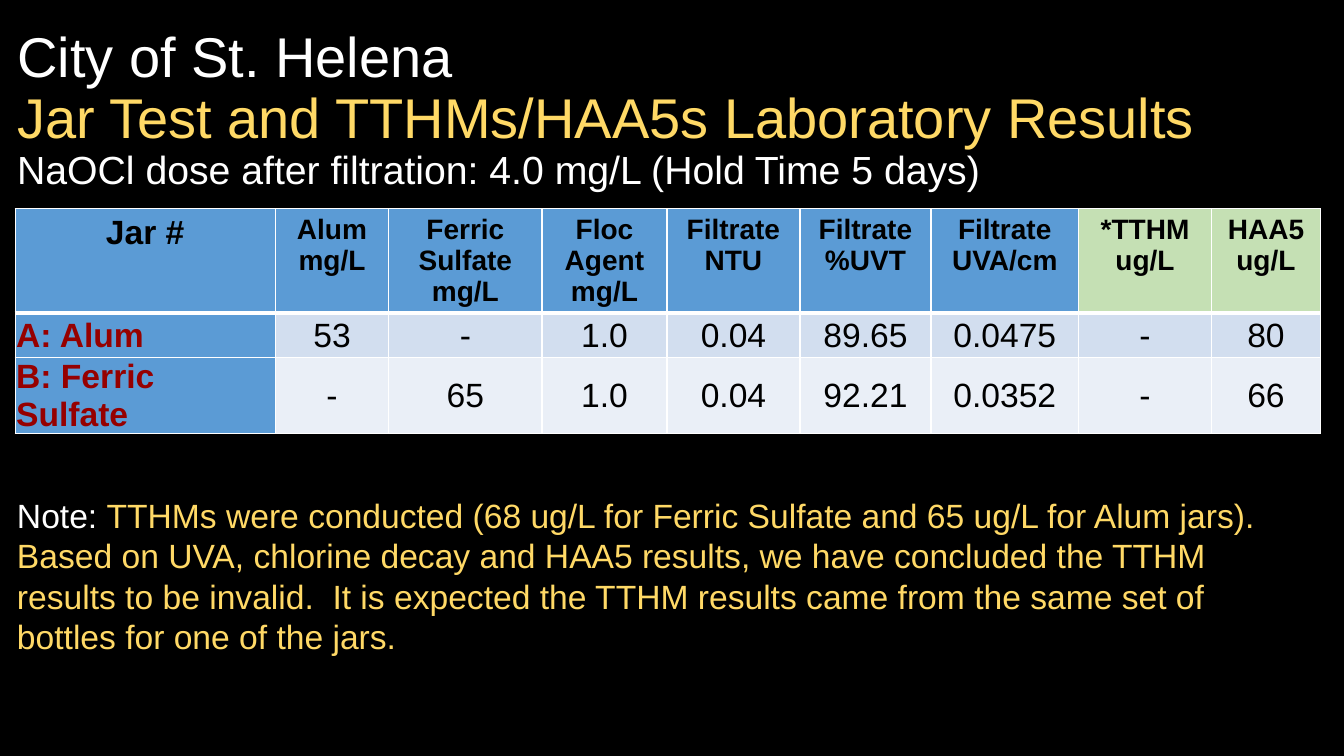
"""Build the jar test results slide."""
from copy import deepcopy
from dataclasses import dataclass

from lxml import etree
from pptx import Presentation
from pptx.dml.color import RGBColor
from pptx.enum.text import MSO_ANCHOR, MSO_AUTO_SIZE, PP_ALIGN
from pptx.oxml.ns import qn
from pptx.util import Emu, Inches, Pt

LEFT, CENTER = PP_ALIGN.LEFT, PP_ALIGN.CENTER
TOP, MIDDLE = MSO_ANCHOR.TOP, MSO_ANCHOR.MIDDLE
FIXED = MSO_AUTO_SIZE.NONE

BLACK = RGBColor(0x00, 0x00, 0x00)
WHITE = RGBColor(0xFF, 0xFF, 0xFF)
GOLD = RGBColor(0xFF, 0xD9, 0x66)
RED = RGBColor(0x96, 0x00, 0x00)
BLUE = RGBColor(0x5B, 0x9B, 0xD5)
GREEN = RGBColor(0xC5, 0xE0, 0xB4)
MIST = RGBColor(0xD2, 0xDE, 0xEF)
PALE = RGBColor(0xEA, 0xEF, 0xF7)

FONT = "Arial"
WIDTH, HEIGHT = Inches(13.33), Inches(7.5)


@dataclass(frozen=True)
class Piece:
    text: str
    size: int
    color: RGBColor
    bold: bool = False


@dataclass(frozen=True)
class Column:
    head: str
    share: float
    fill: RGBColor
    values: tuple[str, str]
    size: int = 20


@dataclass(frozen=True)
class Style:
    fill: RGBColor
    align: PP_ALIGN
    anchor: MSO_ANCHOR
    pads: tuple[float, float, float, float]
    lines: tuple[int, int, int, int]


TITLE = (
    Piece("City of St. Helena", 40, WHITE),
    Piece("Jar Test and TTHMs/HAA5s Laboratory Results", 40, GOLD),
    Piece("NaOCl dose after filtration: 4.0 mg/L (Hold Time 5 days)", 28, WHITE),
)
NOTE = (
    Piece("Note: ", 24, WHITE),
    Piece(
        "TTHMs were conducted (68 ug/L for Ferric Sulfate and 65 ug/L for Alum jars).  "
        "Based on UVA, chlorine decay and HAA5 results, we have concluded the TTHM "
        "results to be invalid.  It is expected the TTHM results came from the same "
        "set of bottles for one of the jars.", 24, GOLD),
)
COLUMNS = (
    Column("Jar #", 19.35, BLUE, ("A: Alum", "B: Ferric Sulfate"), 24),
    Column("Alum\nmg/L", 8.45, BLUE, ("53", "-")),
    Column("Ferric\nSulfate\nmg/L", 11.4, BLUE, ("-", "65")),
    Column("Floc\nAgent\nmg/L", 9.3, BLUE, ("1.0", "1.0")),
    Column("Filtrate\nNTU", 9.9, BLUE, ("0.04", "0.04")),
    Column("Filtrate\n%UVT", 9.75, BLUE, ("89.65", "92.21")),
    Column("Filtrate\nUVA/cm", 10.98, BLUE, ("0.0475", "0.0352")),
    Column("*TTHM\nug/L", 9.9, GREEN, ("-", "-")),
    Column("HAA5\nug/L", 8.1, GREEN, ("80", "66")),
)
ROWS = (13.8, 5.87, 9.87)
BANDS = (MIST, PALE)
HEAD_PADS = (0.1, 0.05, 0.1, 0.05)
BODY_PADS = (0.01, 0.01, 0.01, 0)


def wide(share: float) -> Emu:
    """Turn a percentage of the slide width into a length."""
    return Emu(round(WIDTH * share / 100))


def high(share: float) -> Emu:
    """Turn a percentage of the slide height into a length."""
    return Emu(round(HEIGHT * share / 100))


def add_run(para, piece: Piece):
    """Add one formatted run to a paragraph."""
    run = para.add_run()
    run.text = piece.text
    font = run.font
    font.name, font.size, font.bold = FONT, Pt(piece.size), piece.bold
    font.color.rgb = piece.color
    return run


def add_title(slide) -> None:
    """Place the title and break it after each piece."""
    title = slide.shapes.title
    title.left, title.top = wide(0.53), high(2.13)
    title.width, title.height = wide(97.75), high(25.07)
    frame = title.text_frame
    frame.auto_size, frame.word_wrap = FIXED, True
    frame.vertical_anchor = MIDDLE
    para = frame.paragraphs[0]
    para.alignment, para.line_spacing = LEFT, 0.9
    for piece in TITLE:
        run = add_run(para, piece)
        if piece is not TITLE[-1]:
            para.add_line_break()
            para._p[-1].append(deepcopy(run._r.rPr))


def add_note(slide) -> None:
    """Place the note below the table."""
    box = slide.shapes.add_textbox(wide(0.53), high(64.8), wide(94.6), high(22.93))
    frame = box.text_frame
    frame.word_wrap = True
    para = frame.paragraphs[0]
    para.alignment, para.line_spacing = LEFT, 1.0
    for piece in NOTE:
        add_run(para, piece)


def add_lines(cell, widths: tuple[int, int, int, int]) -> None:
    """Draw the white borders of a cell."""
    props = cell._tc.get_or_add_tcPr()
    for side, width in zip("LRTB", widths):
        line = etree.SubElement(props, qn(f"a:ln{side}"), w=str(Pt(width)))
        fill = etree.SubElement(line, qn("a:solidFill"))
        etree.SubElement(fill, qn("a:srgbClr"), val=str(WHITE))


def fill_cell(cell, piece: Piece, style: Style) -> None:
    """Write and format one table cell."""
    add_lines(cell, style.lines)
    cell.fill.solid()
    cell.fill.fore_color.rgb = style.fill
    cell.vertical_anchor = style.anchor
    (cell.margin_left, cell.margin_top,
     cell.margin_right, cell.margin_bottom) = map(Inches, style.pads)
    frame = cell.text_frame
    for i, text in enumerate(piece.text.split("\n")):
        para = frame.add_paragraph() if i else frame.paragraphs[0]
        para.alignment = style.align
        add_run(para, Piece(text, piece.size, piece.color, piece.bold))


def add_results(slide) -> None:
    """Build the table of jar results."""
    span = sum(column.share for column in COLUMNS)
    table = slide.shapes.add_table(
        len(ROWS), len(COLUMNS), wide(1.13), high(27.6), wide(span), high(sum(ROWS))
    ).table
    for row, share in zip(table.rows, ROWS):
        row.height = high(share)
    for c, column in enumerate(COLUMNS):
        table.columns[c].width = wide(column.share)
        fill_cell(table.cell(0, c), Piece(column.head, column.size, BLACK, True),
                  Style(column.fill, CENTER, TOP, HEAD_PADS, (1, 1, 1, 3)))
        for r, (text, band) in enumerate(zip(column.values, BANDS), 1):
            name = c == 0
            fill_cell(table.cell(r, c), Piece(text, 24, RED if name else BLACK, name),
                      Style(BLUE if name else band, LEFT if name else CENTER, MIDDLE,
                            BODY_PADS, (1, 1, 3 if r == 1 else 1, 1)))


def main() -> None:
    """Create and save the slide."""
    deck = Presentation()
    deck.slide_width, deck.slide_height = WIDTH, HEIGHT
    slide = deck.slides.add_slide(deck.slide_layouts.get_by_name("Title Only"))
    back = slide.background.fill
    back.solid()
    back.fore_color.rgb = BLACK
    add_title(slide)
    add_results(slide)
    add_note(slide)
    deck.save("out.pptx")


if __name__ == "__main__":
    main()
